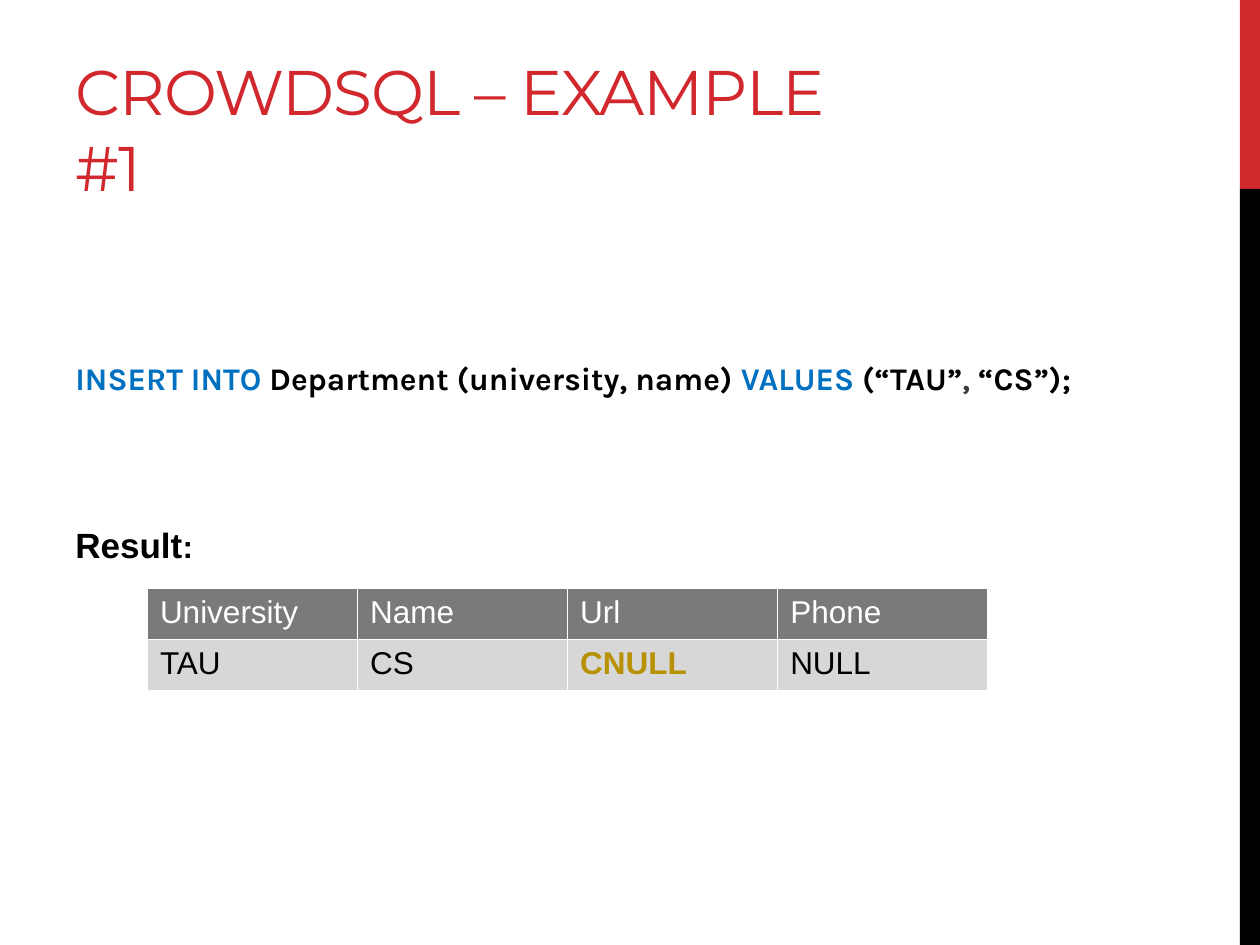
from lxml import etree
from pptx import Presentation
from pptx.dml.color import RGBColor
from pptx.enum.shapes import MSO_SHAPE
from pptx.enum.text import MSO_ANCHOR
from pptx.oxml.ns import qn
from pptx.util import Inches, Pt

RECT = MSO_SHAPE.RECTANGLE
MIDDLE, BOTTOM = MSO_ANCHOR.MIDDLE, MSO_ANCHOR.BOTTOM

RED = RGBColor(0xD1, 0x28, 0x2E)
BLACK = RGBColor(0, 0, 0)
WHITE = RGBColor(0xFF, 0xFF, 0xFF)
BLUE = RGBColor(0x00, 0x70, 0xC0)
CHARCOAL = RGBColor(0x3D, 0x3D, 0x3D)
GOLD = RGBColor(0xB8, 0x91, 0x01)
HEADER_GRAY = RGBColor(0x7A, 0x7A, 0x7A)
ROW_GRAY = RGBColor(0xD7, 0xD7, 0xD7)

STATEMENT = [
    ("INSERT INTO ", BLUE),
    ("Department (university, name) ", BLACK),
    ("VALUES ", BLUE),
    ("(“TAU”", BLACK),
    (", ", CHARCOAL),
    ("“CS”);", BLACK),
]
RESULT_ROWS = [
    ["University", "Name", "Url", "Phone"],
    ["TAU", "CS", "CNULL", "NULL"],
]


def add_run(p, text, font, size, color, bold=False):
    r = p.add_run()
    r.text = text
    r.font.name = font
    r.font.size = Pt(size)
    r.font.color.rgb = color
    r.font.bold = bold
    return r


def add_bar(slide, top, height, color):
    sp = slide.shapes.add_shape(RECT, Inches(9.84), Inches(top), Inches(0.16), Inches(height))
    sp.shadow.inherit = False
    sp.fill.solid()
    sp.fill.fore_color.rgb = color
    sp.line.fill.background()


def add_text_box(slide, top, width, height, anchor):
    sp = slide.shapes.add_textbox(Inches(0.5), Inches(top), Inches(width), Inches(height))
    tf = sp.text_frame
    tf.word_wrap = True
    tf.vertical_anchor = anchor
    return tf.paragraphs[0]


def set_borders(cell, color, width):
    tc_pr = cell._tc.get_or_add_tcPr()
    for i, side in enumerate(("a:lnL", "a:lnR", "a:lnT", "a:lnB")):
        ln = etree.Element(qn(side), w=str(Pt(width)))
        fill = etree.SubElement(ln, qn("a:solidFill"))
        etree.SubElement(fill, qn("a:srgbClr"), val=str(color))
        tc_pr.insert(i, ln)


def add_result_table(slide, rows):
    shape = slide.shapes.add_table(len(rows), len(rows[0]), Inches(1.17), Inches(4.67),
                                   Inches(6.67), Inches(0.81))
    for i, row in enumerate(rows):
        for j, text in enumerate(row):
            cell = shape.table.cell(i, j)
            cell.fill.solid()
            cell.fill.fore_color.rgb = ROW_GRAY if i else HEADER_GRAY
            set_borders(cell, WHITE, 1)
            crowd_value = text == "CNULL"
            color = GOLD if crowd_value else BLACK if i else WHITE
            add_run(cell.text_frame.paragraphs[0], text, "Arial", 18, color, crowd_value)


def main():
    prs = Presentation()
    prs.slide_width, prs.slide_height = Inches(10), Inches(7.5)
    slide = prs.slides.add_slide(prs.slide_layouts[6])

    # Side bars
    add_bar(slide, 0, 1.5, RED)
    add_bar(slide, 1.5, 6, BLACK)

    # Title, with slightly tightened letters
    p = add_text_box(slide, 0.17, 6.33, 1.5, BOTTOM)
    r = add_run(p, "CROWDSQL – EXAMPLE #1", "Montserrat", 36, RED)
    r.font._element.set("spc", "-60")

    # SQL statement
    p = add_text_box(slide, 2.8, 8.33, 0.4, MIDDLE)
    for text, color in STATEMENT:
        add_run(p, text, "Karla", 18, color, True)

    # Result label and table
    p = add_text_box(slide, 4.12, 8.33, 0.4, MIDDLE)
    add_run(p, "Result", "Arial", 20, BLACK, True)
    add_run(p, ":", "Arial", 18, BLACK, True)
    add_result_table(slide, RESULT_ROWS)

    prs.save("out.pptx")


if __name__ == "__main__":
    main()
